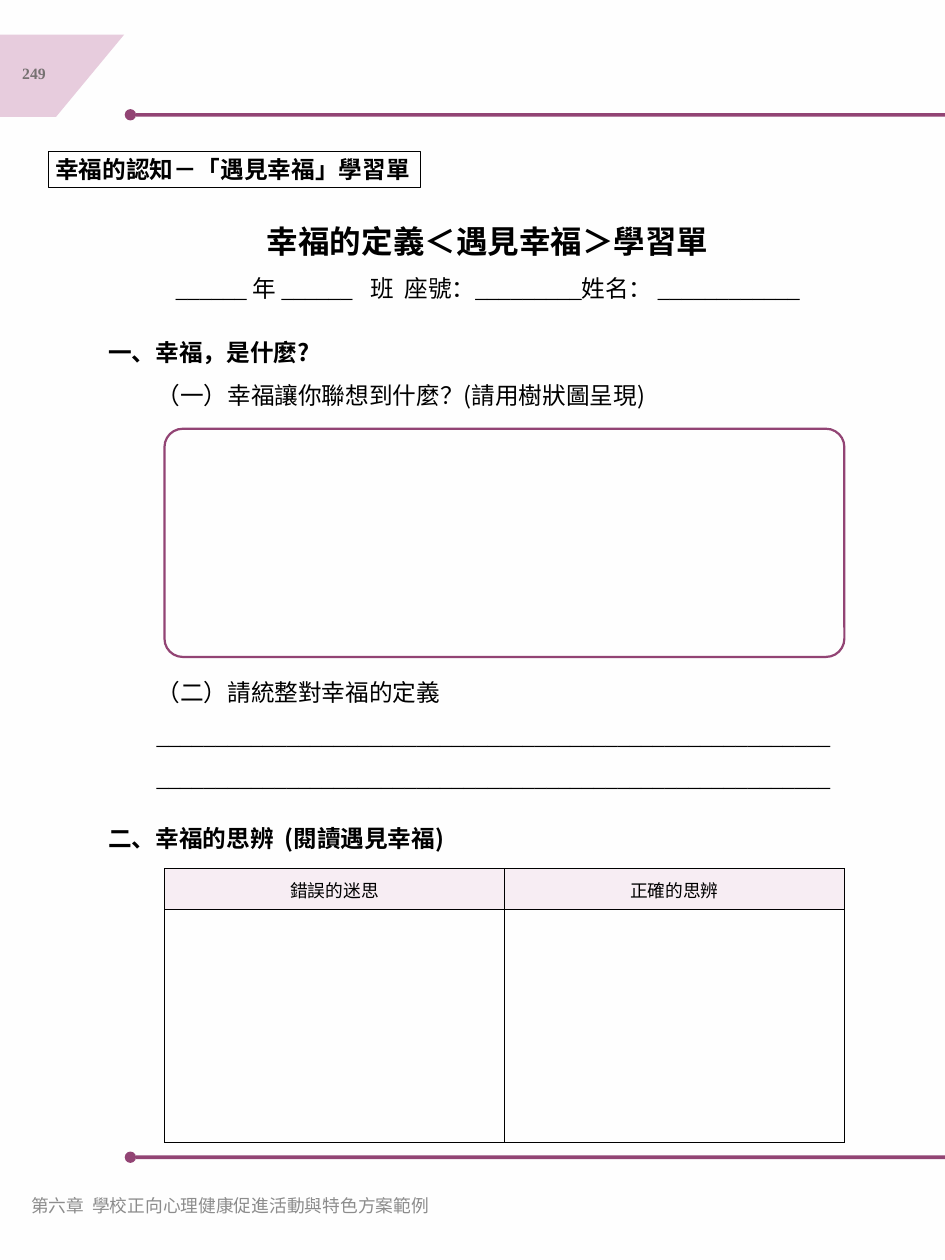
import pptx
import pptx.util
import pptx.dml.color
import pptx.enum.shapes
import pptx.enum.text
import pptx.oxml
import pptx.oxml.ns

WIDTH, HEIGHT = 13.33, 17.78
PLUM, PINK, PALE, BLACK = "924474", "E7CCDD", "F7EDF3", "000000"
SERIF, SANS = "Times New Roman", "Noto Sans CJK SC"
CENTER = pptx.enum.text.PP_ALIGN.CENTER
MIDDLE = pptx.enum.text.MSO_ANCHOR.MIDDLE
SHAPES = pptx.enum.shapes.MSO_SHAPE
LEADING = 43.2
ROW = LEADING / 72
BODY_LEFT, BODY_TOP, INDENT = 1.43, 4.52, 0.68
FRAME_LEFT, FRAME_WIDTH = 2.32, 9.59

PAGE_NUMBER = "249"
TAB_OUTLINE = [(0, 0.49), (1.75, 0.49), (0.79, 1.65), (0, 1.65)]
RULE_CENTERS = (1.62, 16.33)
LABEL = "幸福的認知－「遇見幸福」學習單"
TITLE = "幸福的定義＜遇見幸福＞學習單"
STUDENT = "______ 年 ______   班  座號：_________姓名： ____________"
ANSWER_LINE = "_" * 57
SECTIONS = [
    (0, 0, [("一、幸福，是什麼?", SANS, True)]),
    (1, INDENT, [("（一）幸福讓你聯想到什麼？(請用樹狀圖呈現)", SANS, False)]),
    (8, INDENT, [("（二）請統整對幸福的定義", SANS, False),
                 (ANSWER_LINE, SERIF, False), (ANSWER_LINE, SERIF, False)]),
    (11.42, 0, [("二、幸福的思辨  (閱讀遇見幸福)", SANS, True)]),
]
MYTHS = [("錯誤的迷思", "正確的思辨"), ("", "")]
MYTH_ROWS = (0.58, 3.28)
CHAPTER = "第六章  學校正向心理健康促進活動與特色方案範例"


def inches(*lengths):
    return [pptx.util.Inches(length) for length in lengths]


def color(code):
    return pptx.dml.color.RGBColor.from_string(code)


def style(paragraph, text, size, code=BLACK, bold=False, face=SERIF, align=None, leading=None):
    paragraph.text = text
    paragraph.alignment = align
    if leading:
        paragraph.line_spacing = pptx.util.Pt(leading)
    font = paragraph.font
    font.size, font.bold, font.name = pptx.util.Pt(size), bold, face
    font.color.rgb = color(code)


def paint(shape, fill=None, line=None, weight=1):
    shape.shadow.inherit = False
    if fill:
        shape.fill.solid()
        shape.fill.fore_color.rgb = color(fill)
    else:
        shape.fill.background()
    if line:
        shape.line.color.rgb = color(line)
        shape.line.width = pptx.util.Pt(weight)
    else:
        shape.line.fill.background()
    return shape


def add_text(slide, box, lines, anchor=pptx.enum.text.MSO_ANCHOR.TOP):
    frame = slide.shapes.add_textbox(*inches(*box)).text_frame
    frame.word_wrap = True
    frame.vertical_anchor = anchor
    for index, line in enumerate(lines):
        paragraph = frame.add_paragraph() if index else frame.paragraphs[0]
        style(paragraph, **line)


def add_rules(slide):
    dot, bar, left = 0.16, 0.05, 1.76
    for center in RULE_CENTERS:
        parts = [(SHAPES.RECTANGLE, left + dot, WIDTH - left - dot, bar),
                 (SHAPES.OVAL, left, dot, dot)]
        for kind, start, width, height in parts:
            box = inches(start, center - height / 2, width, height)
            paint(slide.shapes.add_shape(kind, *box), PLUM)


def add_myths(slide):
    box = inches(FRAME_LEFT, 12.26, FRAME_WIDTH, sum(MYTH_ROWS))
    table = slide.shapes.add_table(len(MYTHS), len(MYTHS[0]), *box).table
    for row, (texts, height) in enumerate(zip(MYTHS, MYTH_ROWS)):
        table.rows[row].height = pptx.util.Inches(height)
        for column, text in enumerate(texts):
            cell = table.cell(row, column)
            cell.vertical_anchor = MIDDLE
            style(cell.text_frame.paragraphs[0], text, 18, align=CENTER)
            for side in ("lnL", "lnR", "lnT", "lnB"):
                cell._tc.get_or_add_tcPr().append(pptx.oxml.parse_xml(
                    f'<a:{side} {pptx.oxml.ns.nsdecls("a")} w="12700"><a:solidFill>'
                    f'<a:srgbClr val="{BLACK}"/></a:solidFill></a:{side}>'))
            if text:
                cell.fill.solid()
                cell.fill.fore_color.rgb = color(PALE)
            else:
                cell.fill.background()


def main():
    """Build the happiness worksheet page."""
    deck = pptx.Presentation()
    deck.slide_width, deck.slide_height = inches(WIDTH, HEIGHT)
    slide = deck.slides.add_slide(deck.slide_layouts[6])
    slide.background.fill.solid()
    slide.background.fill.fore_color.rgb = color("FEFEFE")

    add_rules(slide)
    corners = [inches(*corner) for corner in TAB_OUTLINE]
    outline = slide.shapes.build_freeform(*corners[0])
    outline.add_line_segments(corners[1:], close=True)
    paint(outline.convert_to_shape(), PINK)
    add_text(slide, (0.09, 0.64, 0.78, 0.8),
             [dict(text=PAGE_NUMBER, size=16, code="767171", bold=True, align=CENTER)], MIDDLE)

    label = paint(slide.shapes.add_shape(SHAPES.RECTANGLE, *inches(0.68, 2.14, 5.25, 0.5)),
                  line=BLACK, weight=0.75)
    label.text_frame.word_wrap = False
    style(label.text_frame.paragraphs[0], LABEL, 24, bold=True,
          align=pptx.enum.text.PP_ALIGN.LEFT)

    add_text(slide, (2.32, 2.82, 9.12, 1.44), [
        dict(text=TITLE, size=32, bold=True, align=CENTER, leading=LEADING * 4 / 3),
        dict(text=STUDENT, size=24, align=CENTER, leading=LEADING)])
    for row, indent, lines in SECTIONS:
        box = (BODY_LEFT + indent, BODY_TOP + row * ROW, 11.05 - indent, len(lines) * ROW + 0.1)
        add_text(slide, box, [dict(text=text, size=24, bold=bold, face=face, leading=LEADING)
                              for text, face, bold in lines])

    tree = paint(slide.shapes.add_shape(
        SHAPES.ROUNDED_RECTANGLE, *inches(FRAME_LEFT, 6.05, FRAME_WIDTH, 3.22)),
        line=PLUM, weight=2.25)
    tree.adjustments[0] = 0.08
    add_myths(slide)
    add_text(slide, (0.34, 16.61, 5.98, 0.8),
             [dict(text=CHAPTER, size=18, code="8C8C8C")], MIDDLE)
    deck.save("out.pptx")


if __name__ == "__main__":
    main()
